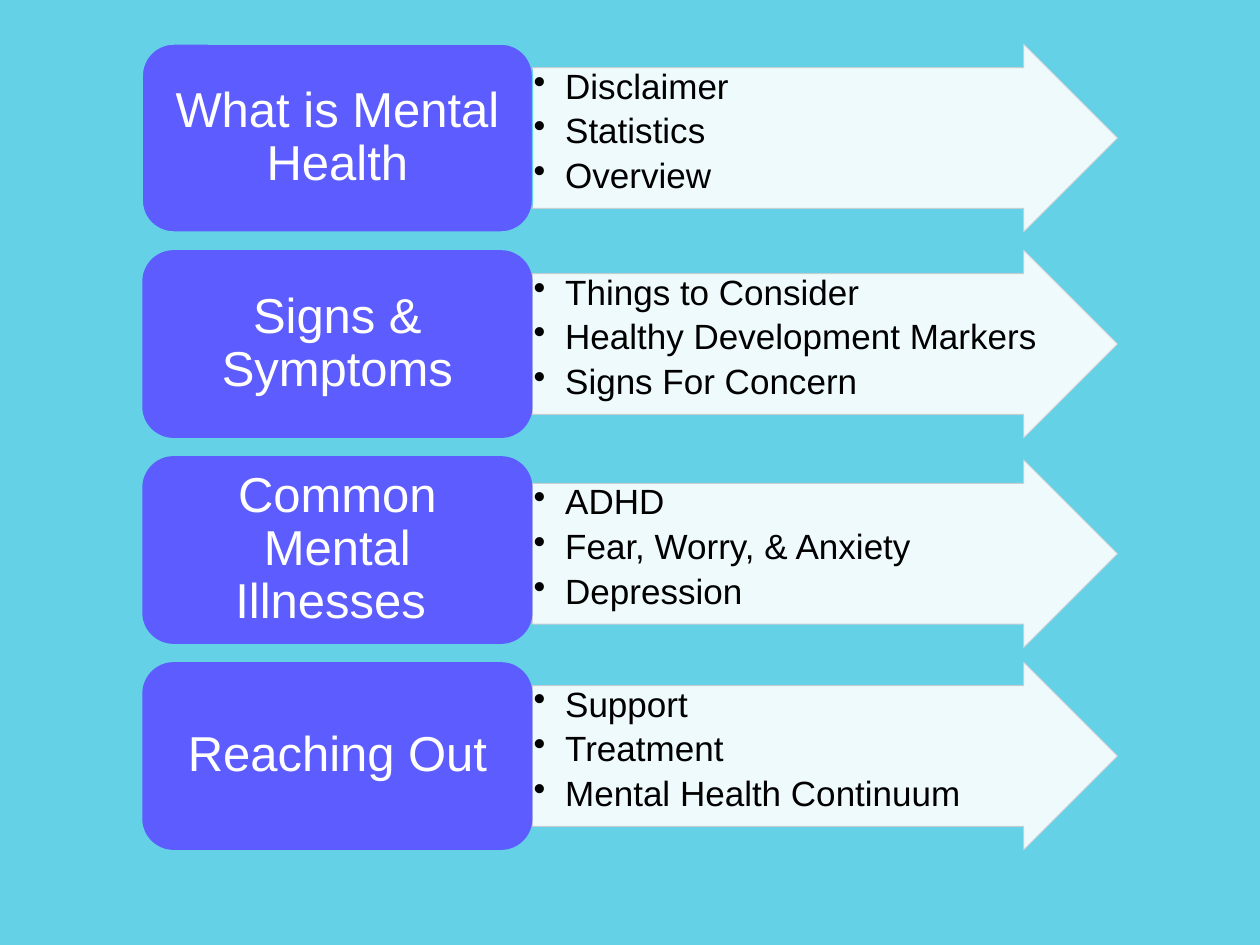
import dataclasses

import pptx
import pptx.dml.color
import pptx.enum.shapes
import pptx.enum.text
import pptx.oxml
import pptx.oxml.ns
import pptx.util

KIND = pptx.enum.shapes.MSO_SHAPE
ALIGN = pptx.enum.text.PP_ALIGN
ANCHOR = pptx.enum.text.MSO_ANCHOR
Inches, Pt = pptx.util.Inches, pptx.util.Pt


@dataclasses.dataclass(frozen=True)
class Theme:
    back: str = "64D1E7"
    box: str = "5C5CFF"
    arrow: str = "FFFFFF"
    edge: str = "CCCDD1"
    light: str = "FFFFFF"
    dark: str = "000000"
    face: str = "Arial"
    head: int = 28
    item: int = 20
    gap: float = 3.9
    alpha: int = 90


THEME = Theme()
WIDE, HIGH = Inches(10), Inches(7.5)

# Shares of the slide's size
LEFT, TOP = 0.113, 0.0467
SPAN, DEEP = 0.774, 0.1987
STEP = 0.218
SPLIT = 0.4  # share of a row taken by its heading

# Heading, items, arrow's drop as a share of the row, heading outlined
ROWS = [
    ("What is Mental Health", ["Disclaimer", "Statistics", "Overview"], 0, True),
    ("Signs & Symptoms",
     ["Things to Consider", "Healthy Development Markers", "Signs For Concern"], 0, False),
    ("Common Mental Illnesses ",
     ["ADHD", "Fear, Worry, & Anxiety", "Depression"], 0.02, False),
    ("Reaching Out", ["Support", "Treatment", "Mental Health Continuum"], 0, False),
]


def tint(tone):
    return pptx.dml.color.RGBColor.from_string(tone)


def apply(thing, style):
    for name, value in style.items():
        setattr(thing, name, value)


def fade(fill):
    """Make a solid fill partly clear."""
    color = fill._xPr.find(".//" + pptx.oxml.ns.qn("a:srgbClr"))
    node = pptx.oxml.parse_xml(
        f'<a:alpha {pptx.oxml.ns.nsdecls("a")} val="{THEME.alpha * 1000}"/>')
    color.append(node)


def bullet(para):
    props = para._p.get_or_add_pPr()
    props.set("marL", str(Inches(0.25)))
    props.set("indent", str(-Inches(0.25)))
    props.append(pptx.oxml.parse_xml(
        f'<a:buChar {pptx.oxml.ns.nsdecls("a")} char="•"/>'))


def panel(slide, kind, area, tone, edge=None, width=0):
    shape = slide.shapes.add_shape(kind, *(round(size) for size in area))
    shape.shadow.inherit = False
    shape.fill.solid()
    shape.fill.fore_color.rgb = tint(tone)
    if edge:
        shape.line.color.rgb = tint(edge)
        shape.line.width = Pt(width)
    else:
        shape.line.fill.background()
    return shape


def write(shape, lines, frame, para, font, tone):
    """Fill a shape with paragraphs and return them."""
    text = shape.text_frame
    apply(text, {"word_wrap": True, **frame})
    text.text = "\n".join(lines)
    for part in text.paragraphs:
        apply(part, {"line_spacing": 0.9, **para})
        for run in part.runs:
            apply(run.font, {"name": THEME.face, **font})
            run.font.color.rgb = tint(tone)
    return text.paragraphs


def arrow(slide, area, items):
    shape = panel(slide, KIND.RIGHT_ARROW, area, THEME.arrow, THEME.edge, 0.5)
    shape.adjustments[0] = 0.75
    fade(shape.fill)
    fade(shape.line.fill)
    sides = ("margin_left", "margin_top", "margin_right", "margin_bottom")
    frame = {"vertical_anchor": ANCHOR.TOP, **dict.fromkeys(sides, Inches(0.01))}
    para = {"level": 1, "alignment": ALIGN.LEFT, "space_after": Pt(THEME.gap)}
    for part in write(shape, items, frame, para, {"size": Pt(THEME.item)}, THEME.dark):
        bullet(part)


def heading(slide, area, title, edge):
    shape = panel(slide, KIND.ROUNDED_RECTANGLE, area, THEME.box, edge, 0.75)
    frame = {"vertical_anchor": ANCHOR.MIDDLE,
             "margin_left": Inches(0.12), "margin_right": Inches(0.12),
             "margin_top": Inches(0.06), "margin_bottom": Inches(0.06)}
    write(shape, [title], frame, {"alignment": ALIGN.CENTER},
          {"size": Pt(THEME.head)}, THEME.light)


def row(slide, area, title, items, drop, lined):
    left, top, width, height = area
    cut = width * SPLIT
    arrow(slide, (left + cut, top + drop * height, width - cut, height), items)
    heading(slide, (left, top, cut, height), title, THEME.back if lined else None)


def main():
    deck = pptx.Presentation()
    apply(deck, {"slide_width": WIDE, "slide_height": HIGH})
    slide = deck.slides.add_slide(deck.slide_layouts[6])
    slide.background.fill.solid()
    slide.background.fill.fore_color.rgb = tint(THEME.back)
    for index, parts in enumerate(ROWS):
        top = TOP + index * STEP
        row(slide, (LEFT * WIDE, top * HIGH, SPAN * WIDE, DEEP * HIGH), *parts)
    deck.save("out.pptx")


if __name__ == "__main__":
    main()
